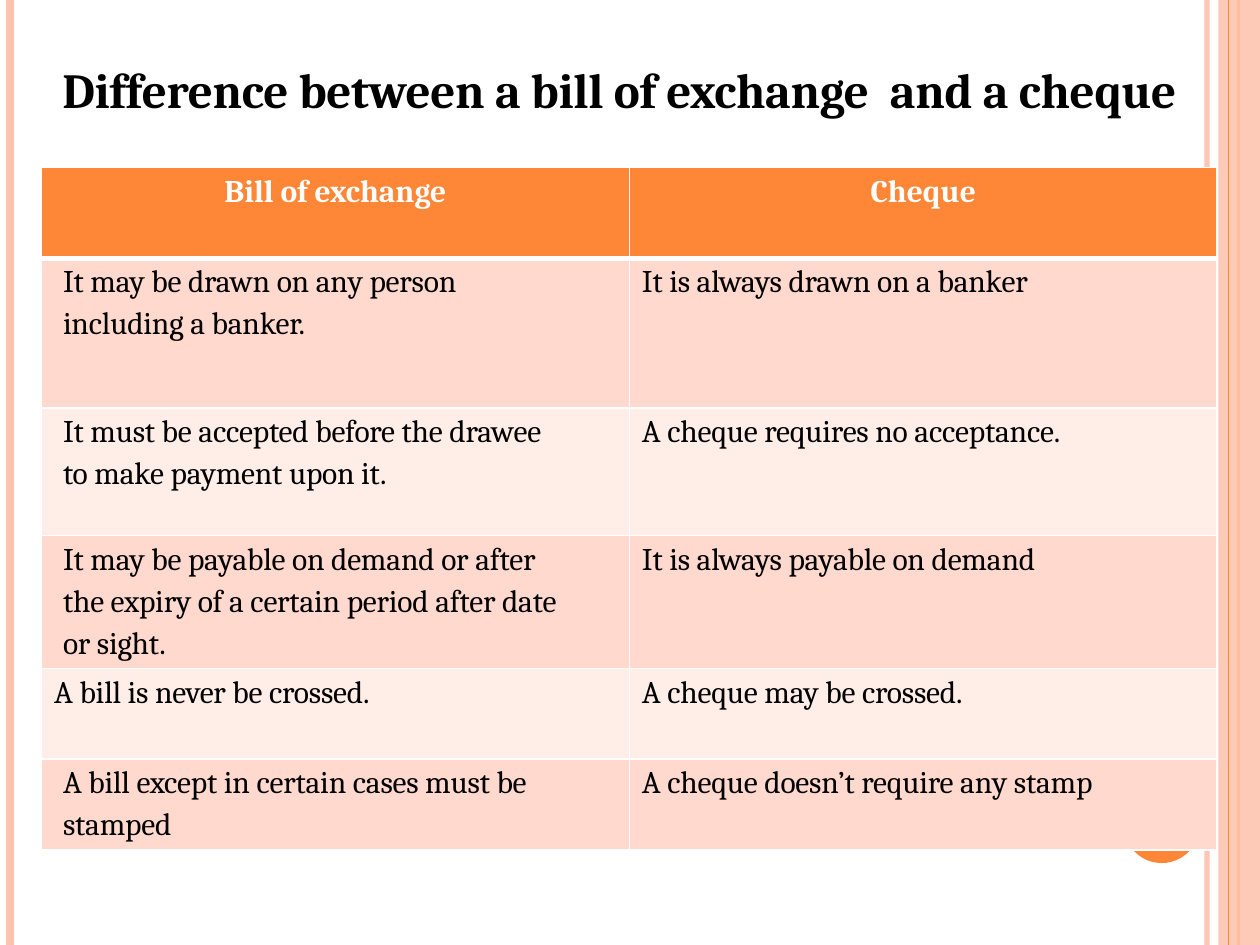
from pptx import Presentation
from pptx.dml.color import RGBColor
from pptx.enum.shapes import MSO_CONNECTOR, MSO_SHAPE
from pptx.enum.text import MSO_ANCHOR, MSO_AUTO_SIZE, PP_ALIGN
from pptx.oxml.ns import qn
from pptx.util import Inches, Pt
from lxml import etree

STRAIGHT = MSO_CONNECTOR.STRAIGHT
RECTANGLE, OVAL = MSO_SHAPE.RECTANGLE, MSO_SHAPE.OVAL
TOP, CENTER, LEFT = MSO_ANCHOR.TOP, PP_ALIGN.CENTER, PP_ALIGN.LEFT
NO_AUTOFIT = MSO_AUTO_SIZE.NONE

FONT = "Cambria"
COLORS = {
    "text": "000000", "white": "FFFFFF", "orange": "FE8637",
    "peach": "FEC3AE", "dark_band": "FFD9CE", "light_band": "FFEDE8",
}

HEADINGS = ("Bill of exchange", "Cheque")
# Each row: lines about the bill, line about the cheque, row height
DIFFERENCES = [
    (("It may be drawn on any person", "including a banker."),
     "It is always drawn on a banker", 1.19),
    (("It must be accepted before the drawee", "to make payment upon it."),
     "A cheque requires no acceptance.", 1.01),
    (("It may be payable on demand or after",
      "the expiry of a certain period after date", "or sight."),
     "It is always payable on demand", 1.05),
    (("A bill is never be crossed.",), "A cheque may be crossed.", 0.72),
    (("A bill except in certain cases must be", "stamped"),
     "A cheque doesn’t require any stamp", 0.72),
]
HEADING_HEIGHT = 0.72


def rgb(name):
    return RGBColor.from_string(COLORS[name])


def set_opacity(fill_owner, percent):
    color = fill_owner.find(".//" + qn("a:srgbClr"))
    etree.SubElement(color, qn("a:alpha"), val=str(percent * 1000))


def format_runs(paragraph, size, color, bold, spacing):
    for run in paragraph.runs:
        run.font.name = FONT
        run.font.size = Pt(size)
        run.font.bold = bold
        run.font.color.rgb = rgb(color)
        run.font._element.set("spc", str(spacing))


def add_stripe(slide, x, height, color, width, opacity=100):
    stripe = slide.shapes.add_connector(
        STRAIGHT, Inches(x), 0, Inches(x), Inches(height))
    stripe.line.color.rgb = rgb(color)
    stripe.line.width = Pt(width)
    properties = stripe._element.spPr
    if opacity < 100:
        set_opacity(properties, opacity)
    etree.SubElement(properties, qn("a:effectLst"))


def add_solid(slide, kind, left, top, width, height, color):
    solid = slide.shapes.add_shape(
        kind, Inches(left), Inches(top), Inches(width), Inches(height))
    solid.shadow.inherit = False
    solid.fill.solid()
    solid.fill.fore_color.rgb = rgb(color)
    solid.line.fill.background()
    return solid


def add_side_bands(slide, width, height):
    """Stripes along both edges and the round page marker."""
    add_stripe(slide, width - 0.42, height, "peach", 3, 93)
    add_stripe(slide, 0.08, height, "peach", 4.5)
    add_stripe(slide, width - 0.17, height, "orange", 1.5)
    band = add_solid(slide, RECTANGLE, width - 0.33, 0, 0.33, height, "peach")
    set_opacity(band._element.spPr, 87)
    add_stripe(slide, width - 0.25, height, "orange", 0.75)
    add_solid(slide, OVAL, 8.92, 6.25, 0.6, 0.6, "orange")


def add_title(slide, left, top, width, height):
    title = slide.shapes.title
    title.left, title.top = Inches(left), Inches(top)
    title.width, title.height = Inches(width), Inches(height)
    frame = title.text_frame
    frame.text = "Difference between a bill of exchange  and a cheque"
    frame.word_wrap = True
    frame.auto_size = NO_AUTOFIT
    frame.vertical_anchor = TOP
    heading = frame.paragraphs[0]
    heading.alignment = CENTER
    format_runs(heading, 28, "text", True, -15)


def set_borders(cell, top, bottom):
    properties = cell._tc.get_or_add_tcPr()
    for side, width in (("L", 1), ("R", 1), ("T", top), ("B", bottom)):
        border = etree.SubElement(
            properties, qn(f"a:ln{side}"), w=str(Pt(width)))
        fill = etree.SubElement(border, qn("a:solidFill"))
        etree.SubElement(fill, qn("a:srgbClr"), val=COLORS["white"])


def fill_cell(cell, lines, fill, heading=False, indent=0):
    cell.text_frame.text = "\n".join(lines)
    for number, paragraph in enumerate(cell.text_frame.paragraphs):
        paragraph.alignment = CENTER if heading else LEFT
        if number:
            paragraph.space_before = Pt(3.2)
        if indent:
            paragraph._p.get_or_add_pPr().set("marL", str(Inches(indent)))
        format_runs(paragraph, 18, "white" if heading else "text", heading,
                    0 if heading else -10)
    cell.fill.solid()
    cell.fill.fore_color.rgb = rgb(fill)


def add_comparison(slide, left, top, width):
    heights = [HEADING_HEIGHT] + [height for _, _, height in DIFFERENCES]
    table = slide.shapes.add_table(
        len(heights), len(HEADINGS), Inches(left), Inches(top),
        Inches(width), Inches(sum(heights))).table
    for row, height in zip(table.rows, heights):
        row.height = Inches(height)
    for column, heading in enumerate(HEADINGS):
        cell = table.cell(0, column)
        set_borders(cell, 1, 3)
        fill_cell(cell, [heading], "orange", heading=True)
    for row, (bill, cheque, _) in enumerate(DIFFERENCES, start=1):
        band = "dark_band" if row % 2 else "light_band"
        bill_indent = 0.07 if len(bill) > 1 else 0
        for column, (lines, indent) in enumerate(
                ((bill, bill_indent), ([cheque], 0))):
            cell = table.cell(row, column)
            set_borders(cell, 3 if row == 1 else 1, 1)
            fill_cell(cell, lines, band, indent=indent)


def main():
    deck = Presentation()
    deck.slide_width, deck.slide_height = Inches(10), Inches(7.5)
    slide = deck.slides.add_slide(deck.slide_layouts.get_by_name("Title Only"))
    add_side_bands(slide, 10, 7.5)
    add_title(slide, 0.33, 0.42, 9.17, 0.8)
    add_comparison(slide, 0.33, 1.33, 9.33)
    deck.save("out.pptx")


if __name__ == "__main__":
    main()
